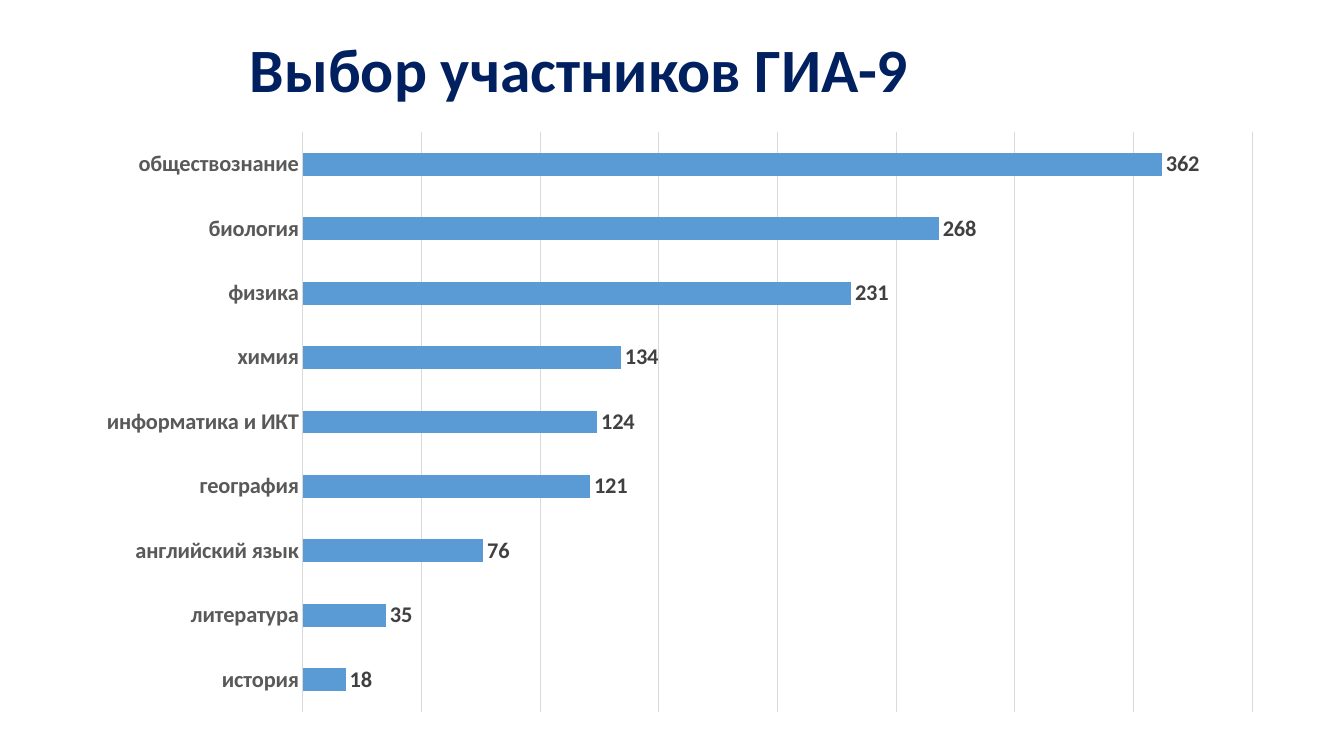
from pptx import Presentation
from pptx.chart.data import CategoryChartData
from pptx.dml.color import RGBColor
from pptx.enum.chart import XL_CHART_TYPE, XL_LABEL_POSITION, XL_TICK_MARK
from pptx.enum.text import MSO_ANCHOR, PP_ALIGN
from pptx.util import Pt

TITLE = "Выбор участников ГИА-9"
EXAMS = [
    ("история", 18),
    ("литература", 35),
    ("английский язык", 76),
    ("география", 121),
    ("информатика и ИКТ", 124),
    ("химия", 134),
    ("физика", 231),
    ("биология", 268),
    ("обществознание", 362),
]
COLORS = {
    "title": "002060",
    "bar": "5B9BD5",
    "grid": "D9D9D9",
    "axis": "595959",
    "label": "404040",
}
FONT = "Calibri"
SIZE = (1344, 756)
TITLE_BOX = (0, 0, 1159, 146)
CHART_BOX = (83, 120, 1193, 604)
SCALE = 914400 / 100.8


def emu(box):
    return [round(n * SCALE) for n in box]


def color(name):
    return RGBColor.from_string(COLORS[name])


def style(font, size, name):
    font.name = FONT
    font.size = Pt(size)
    font.bold = True
    font.color.rgb = color(name)


def rule(line):
    line.color.rgb = color("grid")
    line.width = Pt(0.75)


def add_title(slide):
    frame = slide.shapes.add_textbox(*emu(TITLE_BOX)).text_frame
    frame.word_wrap = True
    frame.vertical_anchor = MSO_ANCHOR.MIDDLE
    frame.text = TITLE
    para = frame.paragraphs[0]
    para.alignment = PP_ALIGN.CENTER
    para.line_spacing = 0.9
    style(para.runs[0].font, 44, "title")


def add_bars(slide):
    data = CategoryChartData()
    names, counts = zip(*EXAMS)
    data.categories = names
    data.add_series("Series 1", counts)
    chart = slide.shapes.add_chart(
        XL_CHART_TYPE.BAR_CLUSTERED, *emu(CHART_BOX), data
    ).chart
    chart.has_legend = False
    chart.has_title = False
    chart.font.name = FONT
    chart.font.size = Pt(10)

    plot = chart.plots[0]
    plot.gap_width = 182
    plot.vary_by_categories = False
    bars = plot.series[0]
    bars.format.fill.solid()
    bars.format.fill.fore_color.rgb = color("bar")
    labels = bars.data_labels
    labels.show_value = True
    labels.position = XL_LABEL_POSITION.OUTSIDE_END
    style(labels.font, 16, "label")

    cats = chart.category_axis
    cats.major_tick_mark = XL_TICK_MARK.NONE
    cats.minor_tick_mark = XL_TICK_MARK.NONE
    style(cats.tick_labels.font, 16, "axis")
    rule(cats.format.line)

    vals = chart.value_axis
    vals.visible = False
    vals.minimum_scale = 0
    vals.maximum_scale = 400
    vals.major_unit = 50
    vals.has_major_gridlines = True
    rule(vals.major_gridlines.format.line)


def main():
    deck = Presentation()
    deck.slide_width, deck.slide_height = emu(SIZE)
    slide = deck.slides.add_slide(deck.slide_layouts[6])
    add_title(slide)
    add_bars(slide)
    deck.save("out.pptx")


if __name__ == "__main__":
    main()
